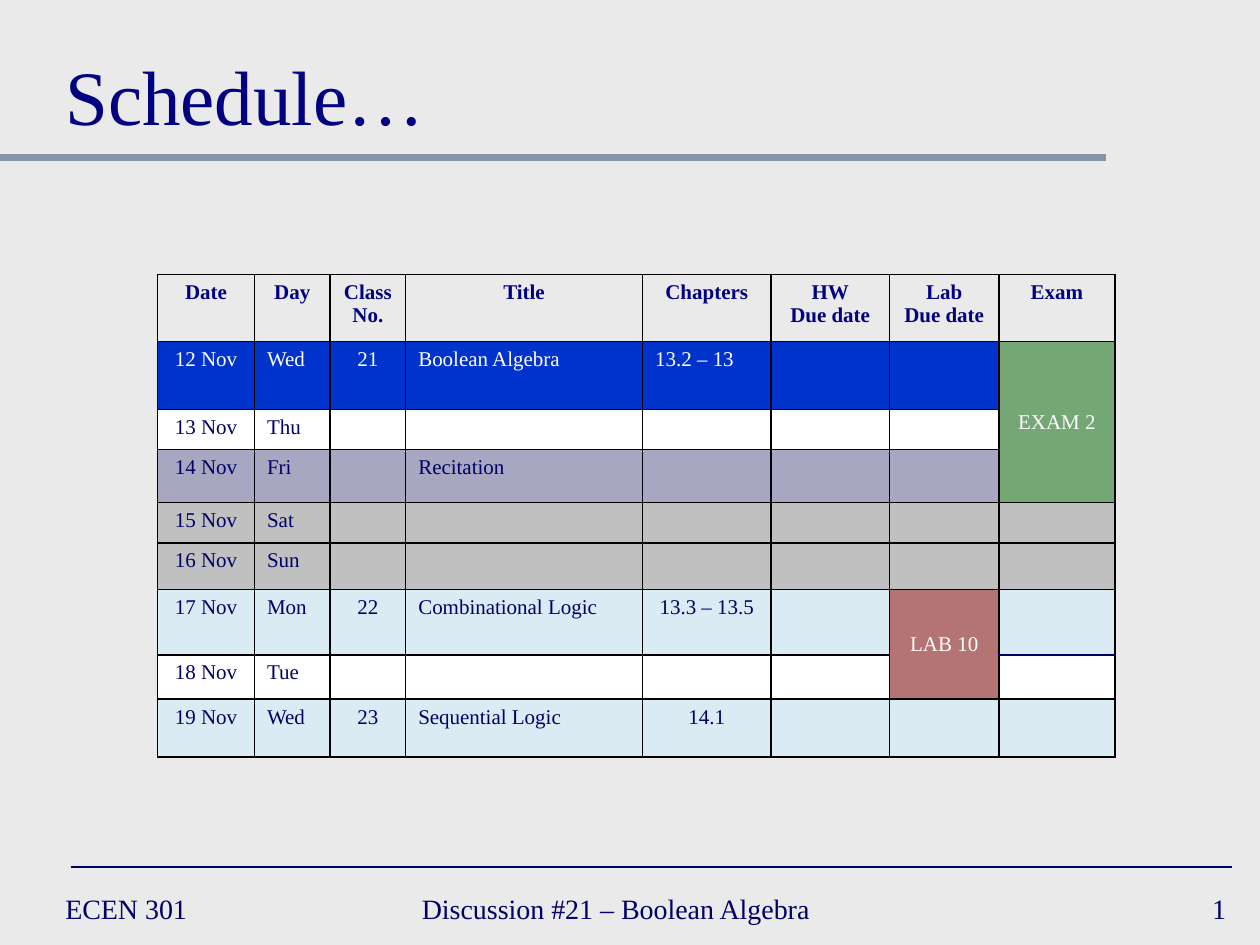
"""Build the class schedule slide."""
import pptx
import pptx.util
import pptx.dml.color
import pptx.enum.shapes
import pptx.enum.text
import pptx.oxml.ns
from lxml import etree

Inches, Pt = pptx.util.Inches, pptx.util.Pt
RGB = pptx.dml.color.RGBColor
ALIGN = pptx.enum.text.PP_ALIGN
ANCHOR = pptx.enum.text.MSO_ANCHOR
qn = pptx.oxml.ns.qn

BACKGROUND = RGB(0xEA, 0xEA, 0xEA)
RULE = RGB(0x84, 0x95, 0xA9)
NAVY = RGB(0x00, 0x00, 0x66)
HEADING = RGB(0x00, 0x00, 0x80)
BLACK = RGB(0x00, 0x00, 0x00)
WHITE = RGB(0xFF, 0xFF, 0xFF)
BLUE = RGB(0x00, 0x33, 0xCC)
SLATE = RGB(0x66, 0x66, 0x99)
SILVER = RGB(0xC0, 0xC0, 0xC0)
SKY = RGB(0xCC, 0xEC, 0xFF)
GREEN = RGB(0x00, 0x66, 0x00)
MAROON = RGB(0x80, 0x00, 0x00)
FONT = "Times New Roman"

COLS = [0.77, 0.6, 0.6, 1.88, 1.02, 0.94, 0.87, 0.92]
HEADER = ["Date", "Day", "Class\nNo.", "Title", "Chapters",
          "HW\nDue date", "Lab\nDue date", "Exam"]
HEADER_HEIGHT = 0.53
DAYS = [
    (0.54, BLUE, 100, ["12 Nov", "Wed", "21", "Boolean Algebra", "13.2 – 13"]),
    (0.32, WHITE, 100, ["13 Nov", "Thu"]),
    (0.42, SLATE, 50, ["14 Nov", "Fri", "", "Recitation"]),
    (0.32, SILVER, 100, ["15 Nov", "Sat"]),
    (0.37, SILVER, 100, ["16 Nov", "Sun"]),
    (0.52, SKY, 50, ["17 Nov", "Mon", "22", "Combinational Logic", "13.3 – 13.5"]),
    (0.35, WHITE, 100, ["18 Nov", "Tue"]),
    (0.46, SKY, 50, ["19 Nov", "Wed", "23", "Sequential Logic", "14.1"]),
]
MERGED = [(1, 7, 3, "EXAM 2", GREEN), (6, 6, 2, "LAB 10", MAROON)]
LEFT_COLS = {1, 3}
LEFT_CELLS = {(1, 4)}
NAVY_EDGES = {(6, 7, "B"), (7, 7, "T")}
LINES = [(0, 1.25, 8.78, RULE, 4), (0.56, 6.88, 9.78, NAVY, 1)]
TEXTS = [
    ("ECEN 301", (0.42, 7, 2.17, 0.42), 16, NAVY, ALIGN.LEFT, ANCHOR.MIDDLE),
    ("Discussion #21 – Boolean Algebra", (3.25, 7, 3.83, 0.42), 16, NAVY,
     ALIGN.LEFT, ANCHOR.MIDDLE),
    ("1", (7.75, 7, 2.08, 0.42), 16, NAVY, ALIGN.RIGHT, ANCHOR.MIDDLE),
    ("Schedule…", (0.42, 0.17, 9.25, 1), 44, HEADING, ALIGN.LEFT, ANCHOR.BOTTOM),
]


def write(tf, text, size=12, color=NAVY, bold=False, align=ALIGN.LEFT):
    for i, line in enumerate(text.split("\n")):
        p = tf.paragraphs[0] if i == 0 else tf.add_paragraph()
        p.alignment = align
        if not line:
            etree.SubElement(p._p, qn("a:endParaRPr"), sz=str(size * 100))
            continue
        r = p.add_run()
        r.text = line
        r.font.name = FONT
        r.font.size = Pt(size)
        r.font.bold = bold
        r.font.color.rgb = color


def add_borders(cell, row, col):
    tcPr = cell._tc.get_or_add_tcPr()
    for side in "LRTB":
        color = NAVY if (row, col, side) in NAVY_EDGES else BLACK
        ln = etree.SubElement(tcPr, qn("a:ln" + side), w=str(Pt(1)))
        fill = etree.SubElement(ln, qn("a:solidFill"))
        etree.SubElement(fill, qn("a:srgbClr"), val=str(color))


def fill_cell(cell, color, opacity):
    cell.fill.solid()
    cell.fill.fore_color.rgb = color
    if opacity < 100:
        clr = cell._tc.tcPr.find(qn("a:solidFill")).find(qn("a:srgbClr"))
        etree.SubElement(clr, qn("a:alpha"), val=str(opacity * 1000))


def add_schedule(s):
    heights = [HEADER_HEIGHT] + [day[0] for day in DAYS]
    frame = s.shapes.add_table(len(heights), len(COLS), Inches(1.25), Inches(2.18),
                               Inches(sum(COLS)), Inches(sum(heights)))
    table = frame.table
    table.first_row = table.horz_banding = False
    for column, width in zip(table.columns, COLS):
        column.width = Inches(width)
    for row, height in zip(table.rows, heights):
        row.height = Inches(height)

    spans = {(top + i, col): (text if i == 0 else "", color)
             for top, col, count, text, color in MERGED for i in range(count)}
    for row in range(len(heights)):
        for col in range(len(COLS)):
            cell = table.cell(row, col)
            add_borders(cell, row, col)
            if row == 0:
                cell.fill.background()
                write(cell.text_frame, HEADER[col], color=HEADING, bold=True,
                      align=ALIGN.CENTER)
                continue
            _, fill, opacity, texts = DAYS[row - 1]
            text = texts[col] if col < len(texts) else ""
            color = WHITE if fill == BLUE else NAVY
            if (row, col) in spans:
                text, fill = spans[row, col]
                opacity, color = 50, WHITE
                cell.vertical_anchor = ANCHOR.MIDDLE
            fill_cell(cell, fill, opacity)
            left = col in LEFT_COLS or (row, col) in LEFT_CELLS
            write(cell.text_frame, text, color=color,
                  align=ALIGN.LEFT if left else ALIGN.CENTER)
    for top, col, count, _, _ in MERGED:
        table.cell(top, col).merge(table.cell(top + count - 1, col))


def main():
    prs = pptx.Presentation()
    prs.slide_width, prs.slide_height = Inches(10), Inches(7.5)
    s = prs.slides.add_slide(prs.slide_layouts[6])
    s.background.fill.solid()
    s.background.fill.fore_color.rgb = BACKGROUND

    for x1, y, x2, color, width in LINES:
        line = s.shapes.add_connector(pptx.enum.shapes.MSO_CONNECTOR.STRAIGHT,
                                      Inches(x1), Inches(y), Inches(x2), Inches(y))
        line.line.color.rgb = color
        line.line.width = Pt(width)
        etree.SubElement(line._element.spPr, qn("a:effectLst"))

    add_schedule(s)

    for text, box, size, color, align, anchor in TEXTS:
        tf = s.shapes.add_textbox(*map(Inches, box)).text_frame
        tf.word_wrap = True
        tf.vertical_anchor = anchor
        write(tf, text, size=size, color=color, align=align)

    prs.save("out.pptx")


if __name__ == "__main__":
    main()
